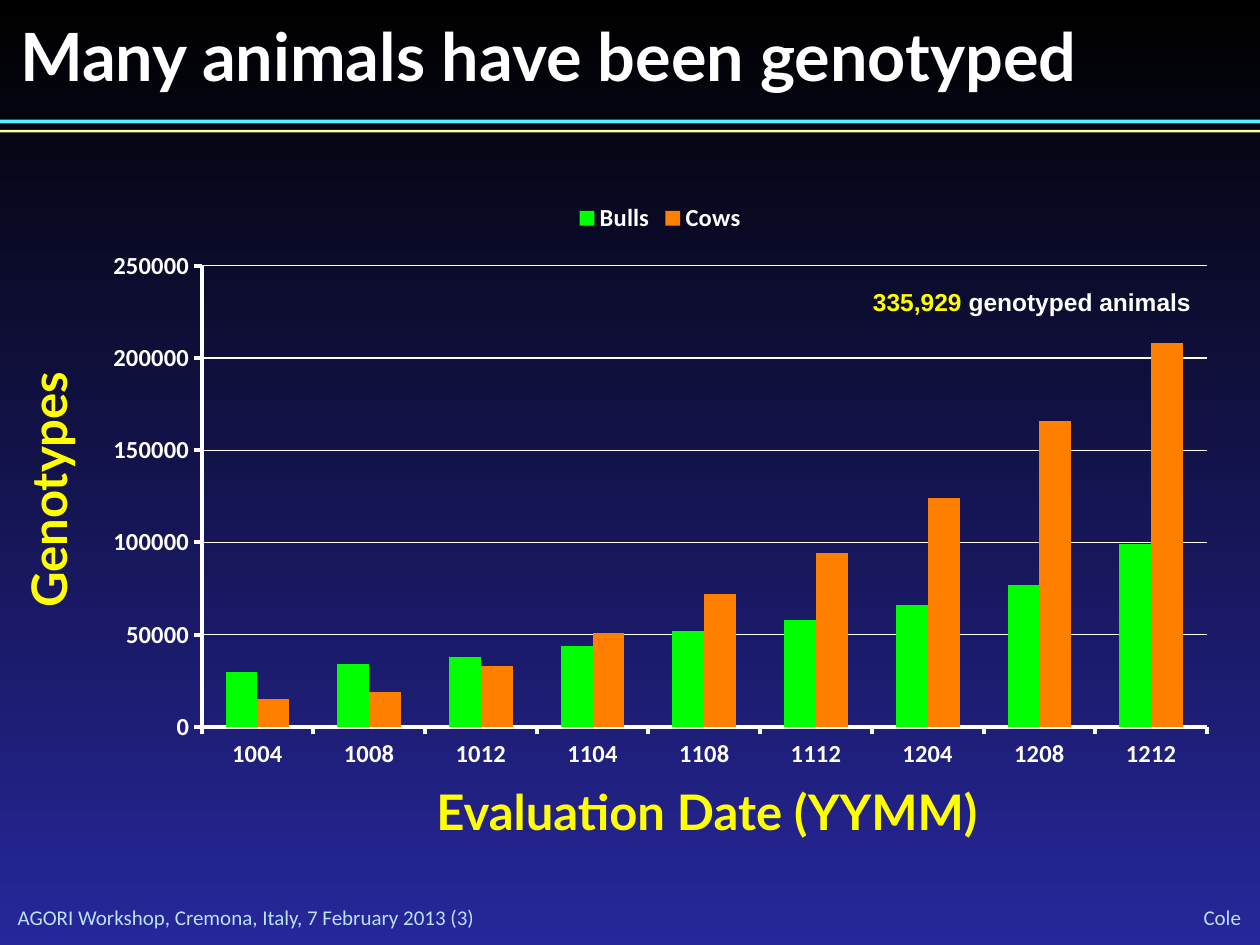
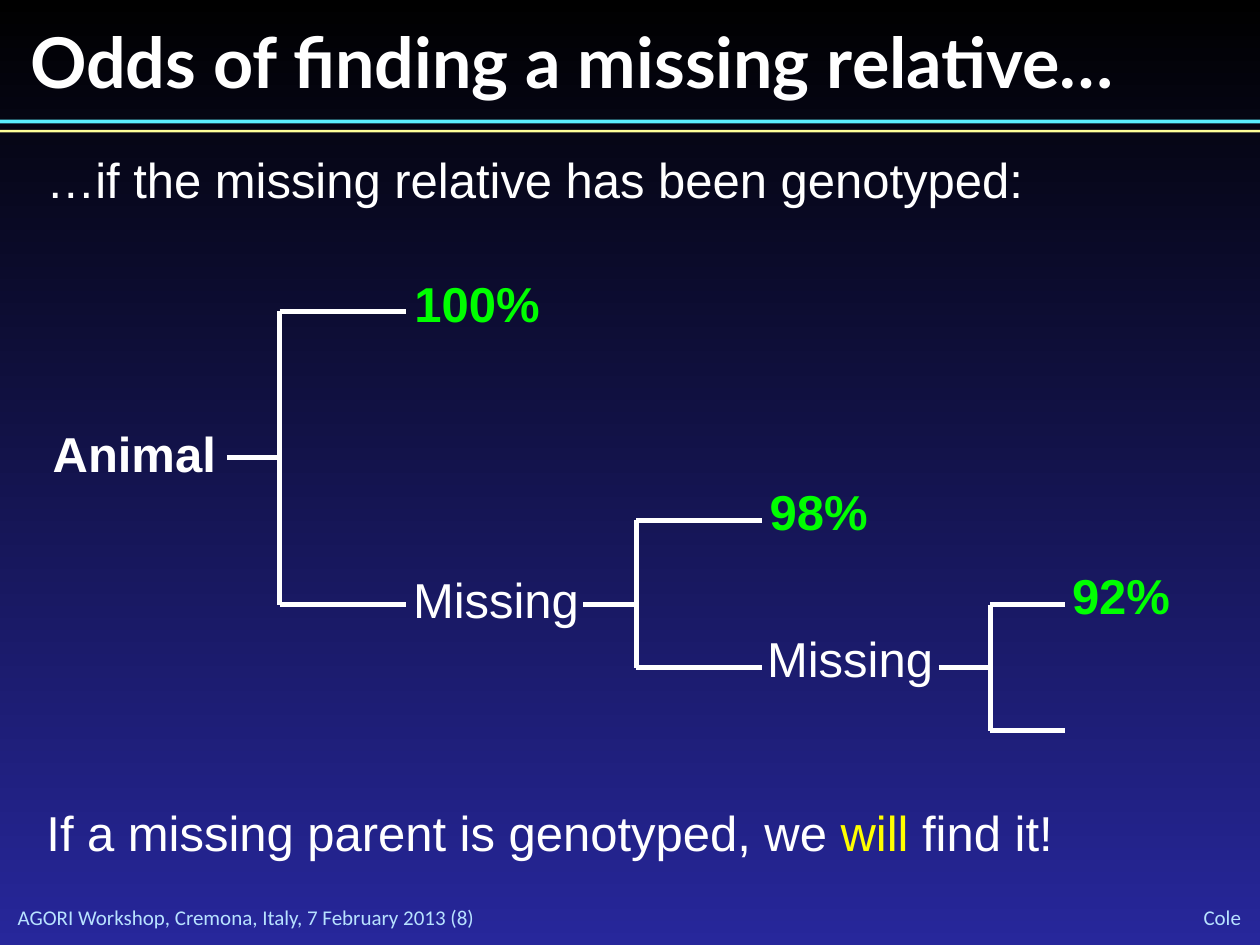
from dataclasses import dataclass
from typing import Any, NamedTuple

from lxml import etree
from pptx import Presentation
from pptx.chart.data import CategoryChartData
from pptx.dml.color import RGBColor
from pptx.enum.chart import XL_CHART_TYPE, XL_LEGEND_POSITION, XL_TICK_MARK
from pptx.enum.shapes import MSO_CONNECTOR, MSO_SHAPE
from pptx.enum.text import MSO_ANCHOR, PP_ALIGN
from pptx.oxml.ns import qn
from pptx.util import Inches, Pt

LEFT, CENTER, RIGHT = PP_ALIGN.LEFT, PP_ALIGN.CENTER, PP_ALIGN.RIGHT
TOP, MIDDLE = MSO_ANCHOR.TOP, MSO_ANCHOR.MIDDLE
COLUMNS = XL_CHART_TYPE.COLUMN_CLUSTERED
LEGEND_TOP = XL_LEGEND_POSITION.TOP
OUTSIDE, NO_TICK = XL_TICK_MARK.OUTSIDE, XL_TICK_MARK.NONE
STRAIGHT, RECT = MSO_CONNECTOR.STRAIGHT, MSO_SHAPE.RECTANGLE


@dataclass(frozen=True)
class Theme:
    white: str = "FFFFFF"
    yellow: str = "FFFF00"
    green: str = "00FF00"
    orange: str = "FF8000"
    pale: str = "B8E2FF"
    cyan: str = "5BEFFF"
    cream: str = "FFFF99"
    dark: str = "000000"
    navy: str = "27279B"
    head: str = "Lato"
    body: str = "Arial"
    plain: str = "Calibri"
    large: int = 28
    label: int = 14
    small: int = 12


THEME = Theme()


class Box(NamedTuple):
    left: float
    top: float
    width: float
    height: float

    def lengths(self) -> list[Inches]:
        return [Inches(side) for side in self]


class Run(NamedTuple):
    text: str
    color: str = THEME.white
    size: int = THEME.large
    font: str = THEME.body
    bold: bool = False


class Band(NamedTuple):
    top: float
    height: float
    color: str


class Fork(NamedTuple):
    """A bracket from a stem at mid height to an upper and a lower branch."""
    stem: float
    spine: float
    tip: float
    top: float
    mid: float
    low: float


class Node(NamedTuple):
    box: Box
    run: Run


BANDS = [Band(0.95, 0.03, THEME.cyan), Band(1.03, 0.02, THEME.cream)]

DATES = ["1004", "1008", "1012", "1104", "1108", "1112", "1204", "1208", "1212"]
HERDS = {
    "Bulls": (THEME.green, [30000, 34000, 38000, 44000, 52000, 58000,
                            66000, 77000, 99000]),
    "Cows": (THEME.orange, [15000, 19000, 33000, 51000, 72000, 94000,
                            124000, 166000, 208000]),
}
CHART = Box(0.72, 1.5, 9.04, 4.7)
PLOT = Box(1.6, 2.11, 7.98, 3.66)

FORKS = [
    Fork(1.8, 2.22, 3.22, 2.47, 3.63, 4.8),
    Fork(4.63, 5.05, 6.05, 4.13, 4.8, 5.3),
    Fork(7.45, 7.86, 8.45, 4.8, 5.3, 5.8),
]
NODES = [
    Node(Box(0.32, 3.31, 1.51, 0.57), Run("Animal", bold=True)),
    Node(Box(3.19, 2.12, 1.21, 0.57), Run("100%", THEME.green, bold=True)),
    Node(Box(3.18, 4.47, 1.53, 0.57), Run("Missing")),
    Node(Box(6.01, 3.77, 0.98, 0.57), Run("98%", THEME.green, bold=True)),
    Node(Box(5.99, 4.94, 1.53, 0.57), Run("Missing")),
    Node(Box(8.41, 4.44, 0.98, 0.57), Run("92%", THEME.green, bold=True)),
]


def rgb(code: str) -> RGBColor:
    return RGBColor.from_string(code)


def assign(target: Any, values: dict[str, Any]) -> None:
    for name, value in values.items():
        setattr(target, name, value)


def style(font: Any, size: int, name: str, color: str, bold: bool) -> None:
    assign(font, {"size": Pt(size), "name": name, "bold": bold})
    font.color.rgb = rgb(color)


def write(slide: Any, box: Box, runs: list[Run], align: PP_ALIGN = LEFT,
          anchor: MSO_ANCHOR = TOP, wrap: bool = True, inset: bool = True,
          turn: int = 0) -> None:
    shape = slide.shapes.add_textbox(*box.lengths())
    shape.rotation = turn
    frame = shape.text_frame
    assign(frame, {"word_wrap": wrap, "vertical_anchor": anchor})
    if not inset:
        sides = ("left", "top", "right", "bottom")
        assign(frame, {f"margin_{side}": Inches(0) for side in sides})
    para = frame.paragraphs[0]
    para.alignment = align
    for item in runs:
        run = para.add_run()
        run.text = item.text
        style(run.font, item.size, item.font, item.color, item.bold)


def rule(slide: Any, x1: float, y1: float, x2: float, y2: float) -> None:
    ends = [Inches(value) for value in (x1, y1, x2, y2)]
    line = slide.shapes.add_connector(STRAIGHT, *ends)
    line.line.color.rgb = rgb(THEME.white)
    line.line.width = Pt(3)
    etree.SubElement(line._element.spPr, qn("a:effectLst"))


def draw_fork(slide: Any, fork: Fork) -> None:
    rule(slide, fork.stem, fork.mid, fork.spine, fork.mid)
    rule(slide, fork.spine, fork.top, fork.spine, fork.low)
    for level in (fork.top, fork.low):
        rule(slide, fork.spine, level, fork.tip, level)


def start(deck: Any, title: Run, box: Box, number: int) -> Any:
    """Add a slide with the shared backdrop, bands, footers and title."""
    slide = deck.slides.add_slide(deck.slide_layouts[6])
    fill = slide.background.fill
    fill.gradient()
    fill.gradient_angle = 270
    for stop, color in zip(fill.gradient_stops, (THEME.dark, THEME.navy)):
        stop.color.rgb = rgb(color)
    for band in BANDS:
        area = Box(0, band.top, 10, band.height)
        shape = slide.shapes.add_shape(RECT, *area.lengths())
        shape.shadow.inherit = False
        shape.fill.solid()
        shape.fill.fore_color.rgb = rgb(band.color)
        shape.line.fill.background()
    event = f"AGORI Workshop, Cremona, Italy, 7 February 2013 ({number})"
    for area, text, align in (
        (Box(0.14, 7.18, 5.22, 0.2), event, LEFT),
        (Box(8.72, 7.17, 1.13, 0.21), "Cole", RIGHT),
    ):
        note = Run(text, THEME.pale, THEME.small, THEME.plain)
        write(slide, area, [note], align, MIDDLE, inset=False)
    write(slide, box, [title], inset=False)
    return slide


def place_plot(chart: Any) -> None:
    """Pin the inner plot area inside the chart frame."""
    area = chart._chartSpace.chart.plotArea
    for old in area.findall(qn("c:layout")):
        area.remove(old)
    layout = etree.Element(qn("c:layout"))
    manual = etree.SubElement(layout, qn("c:manualLayout"))
    values = {
        "layoutTarget": "inner", "xMode": "edge", "yMode": "edge",
        "x": (PLOT.left - CHART.left) / CHART.width,
        "y": (PLOT.top - CHART.top) / CHART.height,
        "w": PLOT.width / CHART.width,
        "h": PLOT.height / CHART.height,
    }
    for name, value in values.items():
        etree.SubElement(manual, qn(f"c:{name}"), val=str(value))
    area.insert(0, layout)


def draw_chart(slide: Any) -> None:
    data = CategoryChartData()
    data.categories = DATES
    for name, (_, counts) in HERDS.items():
        data.add_series(name, counts)
    chart = slide.shapes.add_chart(COLUMNS, *CHART.lengths(), data).chart
    assign(chart, {"has_title": False, "has_legend": True})
    assign(chart.legend, {"position": LEGEND_TOP, "include_in_layout": False})
    style(chart.font, THEME.label, THEME.plain, THEME.white, True)
    style(chart.legend.font, THEME.label, THEME.plain, THEME.white, True)
    plot = chart.plots[0]
    assign(plot, {"gap_width": 150, "overlap": 0, "vary_by_categories": False})
    for series, (color, _) in zip(plot.series, HERDS.values()):
        series.format.fill.solid()
        series.format.fill.fore_color.rgb = rgb(color)
        series.invert_if_negative = False
    scale = chart.value_axis
    assign(scale, {"minimum_scale": 0, "maximum_scale": 250000,
                   "major_unit": 50000, "has_major_gridlines": True})
    assign(scale.tick_labels, {"number_format": "0",
                               "number_format_is_linked": False})
    lines = [(scale.major_gridlines.format.line, 0.75)]
    for axis in (chart.category_axis, scale):
        assign(axis, {"major_tick_mark": OUTSIDE, "minor_tick_mark": NO_TICK})
        style(axis.tick_labels.font, THEME.label, THEME.plain,
              THEME.white, True)
        lines.append((axis.format.line, 2.25))
    for line, width in lines:
        line.color.rgb = rgb(THEME.white)
        line.width = Pt(width)
    place_plot(chart)


def show_counts(deck: Any) -> None:
    title = Run("Many animals have been genotyped", size=38,
                font=THEME.head, bold=True)
    slide = start(deck, title, Box(0.16, 0.12, 9.66, 0.64), 3)
    for box, text, turn in (
        (Box(3.14, 6.15, 4.94, 0.57), "Evaluation Date (YYMM)", 0),
        (Box(-1.8, 3.6, 4.36, 0.57), "Genotypes", 270),
    ):
        name = Run(text, THEME.yellow, font=THEME.head, bold=True)
        write(slide, box, [name], CENTER, turn=turn)
    draw_chart(slide)
    total = [Run("335,929", THEME.yellow, THEME.label, bold=True),
             Run(" genotyped animals", size=THEME.label, bold=True)]
    write(slide, Box(6.83, 2.23, 2.74, 0.34), total, wrap=False)


def show_odds(deck: Any) -> None:
    title = Run("Odds of finding a missing relative…", size=40,
                font=THEME.head, bold=True)
    slide = start(deck, title, Box(0.24, 0.15, 9.56, 0.67), 8)
    lead = Run("…if the missing relative has been genotyped:")
    write(slide, Box(0.27, 1.14, 8.04, 0.57), [lead], wrap=False)
    for fork in FORKS:
        draw_fork(slide, fork)
    for node in NODES:
        write(slide, node.box, [node.run], wrap=False)
    close = [Run("If a missing parent is genotyped, we "),
             Run("will", THEME.yellow), Run(" find it!")]
    write(slide, Box(0.27, 6.32, 9.38, 0.57), close)


def main() -> None:
    deck = Presentation()
    assign(deck, {"slide_width": Inches(10), "slide_height": Inches(7.5)})
    show_counts(deck)
    show_odds(deck)
    deck.save("out.pptx")


if __name__ == "__main__":
    main()
